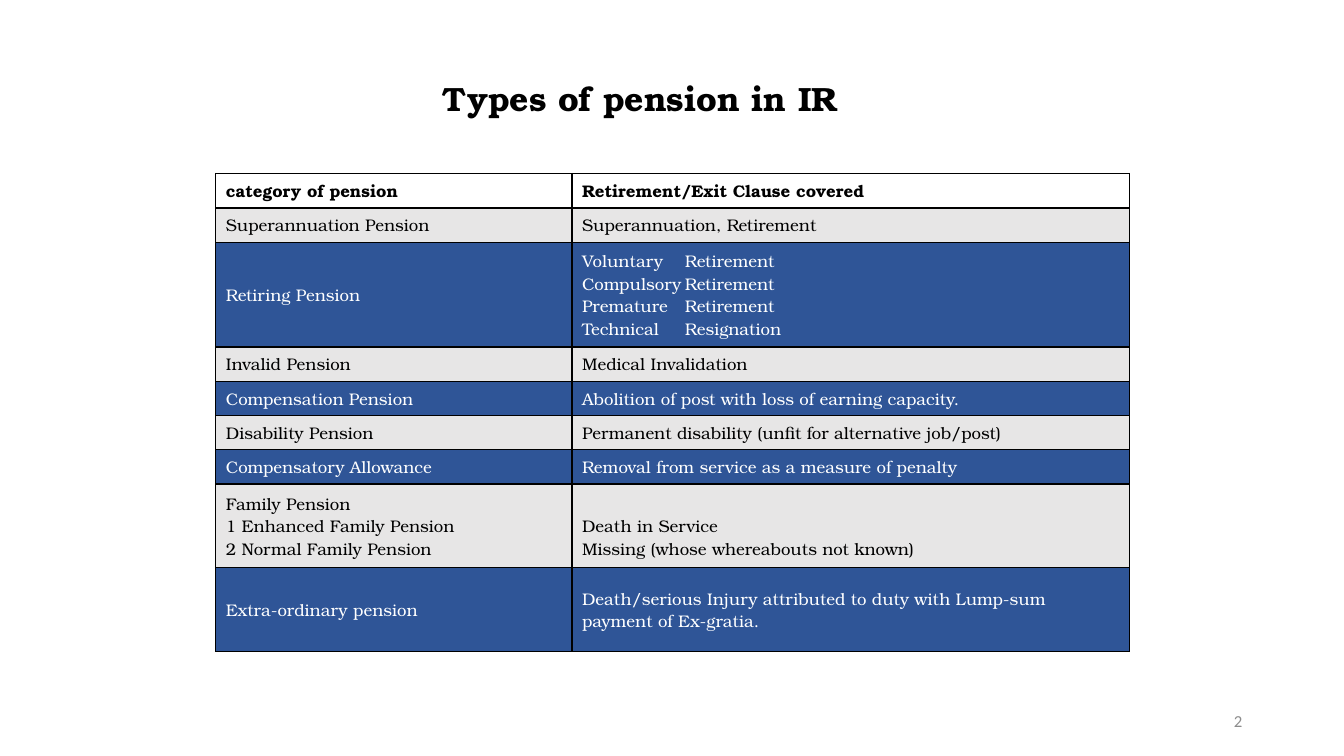
from lxml import etree
from pptx import Presentation, util as u
from pptx.dml.color import RGBColor
from pptx.enum import text
from pptx.oxml.ns import qn

SERIF = "TeX Gyre Bonum"
BLACK, WHITE, GREY, BLUE = "000000", "FFFFFF", "E7E6E6", "2F5597"
RETIREMENT_TAB = 1.02
ROW_HEIGHTS = {1: 0.34, 2: 0.83, 3: 0.83, 4: 1.04}  # by number of text lines
COLUMN_SHARES = (0.39, 0.61)

HEADINGS = ("category of pension", "Retirement/Exit Clause covered")
# category, clauses, lines of text in the row
PENSIONS = [
    ("Superannuation Pension", "Superannuation, Retirement", 1),
    ("Retiring Pension",
     "Voluntary\tRetirement\nCompulsory\tRetirement\n"
     "Premature\tRetirement\nTechnical\tResignation", 4),
    ("Invalid Pension", "Medical Invalidation", 1),
    ("Compensation Pension", "Abolition of post with loss of earning capacity.", 1),
    ("Disability Pension", "Permanent disability (unfit for alternative job/post)", 1),
    ("Compensatory Allowance", "Removal from service as a measure of penalty", 1),
    ("Family Pension\n1 Enhanced Family Pension\n2 Normal Family Pension",
     "Death in Service\nMissing (whose whereabouts not known)", 3),
    ("Extra-ordinary pension",
     "Death/serious Injury attributed to duty with Lump-sum payment of Ex-gratia.", 2),
]


def rgb(hex_colour):
    return RGBColor.from_string(hex_colour)


def write(frame, content, size=12, font=SERIF, colour=BLACK, bold=False,
          align=text.PP_ALIGN.LEFT, spacing=1.0):
    frame.word_wrap = True
    for index, line in enumerate(content.split("\n")):
        paragraph = frame.add_paragraph() if index else frame.paragraphs[0]
        paragraph.alignment, paragraph.line_spacing = align, spacing
        run = paragraph.add_run()
        run.text = line
        run.font.size, run.font.name, run.font.bold = u.Pt(size), font, bold
        run.font.color.rgb = rgb(colour)
        if "\t" in line:
            stops = etree.SubElement(paragraph._p.get_or_add_pPr(), qn("a:tabLst"))
            etree.SubElement(stops, qn("a:tab"), algn="l",
                             pos=str(u.Inches(RETIREMENT_TAB)))


def outline(cell, colour=BLACK, width=1):
    """Draw all four borders of a table cell."""
    properties = cell._tc.get_or_add_tcPr()
    for index, side in enumerate(("lnL", "lnR", "lnT", "lnB")):
        line = etree.Element(qn(f"a:{side}"), w=str(u.Pt(width)))
        fill = etree.SubElement(line, qn("a:solidFill"))
        etree.SubElement(fill, qn("a:srgbClr"), val=colour)
        properties.insert(index, line)


def add_title(slide, left, top, width, height):
    title = slide.shapes.title
    title.left, title.top, title.width, title.height = map(
        u.Inches, (left, top, width, height))
    title.text_frame.vertical_anchor = text.MSO_ANCHOR.MIDDLE
    write(title.text_frame, "Types of pension in IR", size=24, bold=True,
          align=text.PP_ALIGN.CENTER, spacing=0.9)


def add_pension_table(slide, left, top, width):
    rows = [(*HEADINGS, 1), *PENSIONS]
    heights = [ROW_HEIGHTS[lines] for *_, lines in rows]
    table = slide.shapes.add_table(
        len(rows), len(HEADINGS),
        *map(u.Inches, (left, top, width, sum(heights)))).table
    for column, share in zip(table.columns, COLUMN_SHARES):
        column.width = u.Inches(width * share)

    for number, (*contents, lines) in enumerate(rows):
        table.rows[number].height = u.Inches(heights[number])
        fill = (BLUE, GREY)[number % 2] if number else WHITE
        for cell, content in zip(table.rows[number].cells, contents):
            cell.fill.solid()
            cell.fill.fore_color.rgb = rgb(fill)
            cell.vertical_anchor = text.MSO_ANCHOR.MIDDLE
            if lines == 3 and content.count("\n") == 1:
                # Level the two clauses with the two numbered family pensions
                cell.vertical_anchor = text.MSO_ANCHOR.BOTTOM
                cell.margin_bottom = u.Inches(0.08)
            write(cell.text_frame, content, bold=number == 0,
                  colour=WHITE if fill == BLUE else BLACK)
            outline(cell)


def add_page_number(slide, left, top, width, height):
    box = slide.shapes.add_textbox(*map(u.Inches, (left, top, width, height)))
    box.text_frame.vertical_anchor = text.MSO_ANCHOR.MIDDLE
    write(box.text_frame, "2", font="Calibri", colour="8C8C8C",
          align=text.PP_ALIGN.RIGHT)


def main():
    deck = Presentation()
    deck.slide_width, deck.slide_height = u.Inches(13.33), u.Inches(7.5)
    slide = deck.slides.add_slide(deck.slide_layouts[5])
    add_title(slide, 0.6, 0.27, 11.5, 1.45)
    add_pension_table(slide, 2.14, 1.72, 9.06)
    add_page_number(slide, 9.42, 6.95, 3, 0.4)
    deck.save("out.pptx")


if __name__ == "__main__":
    main()
